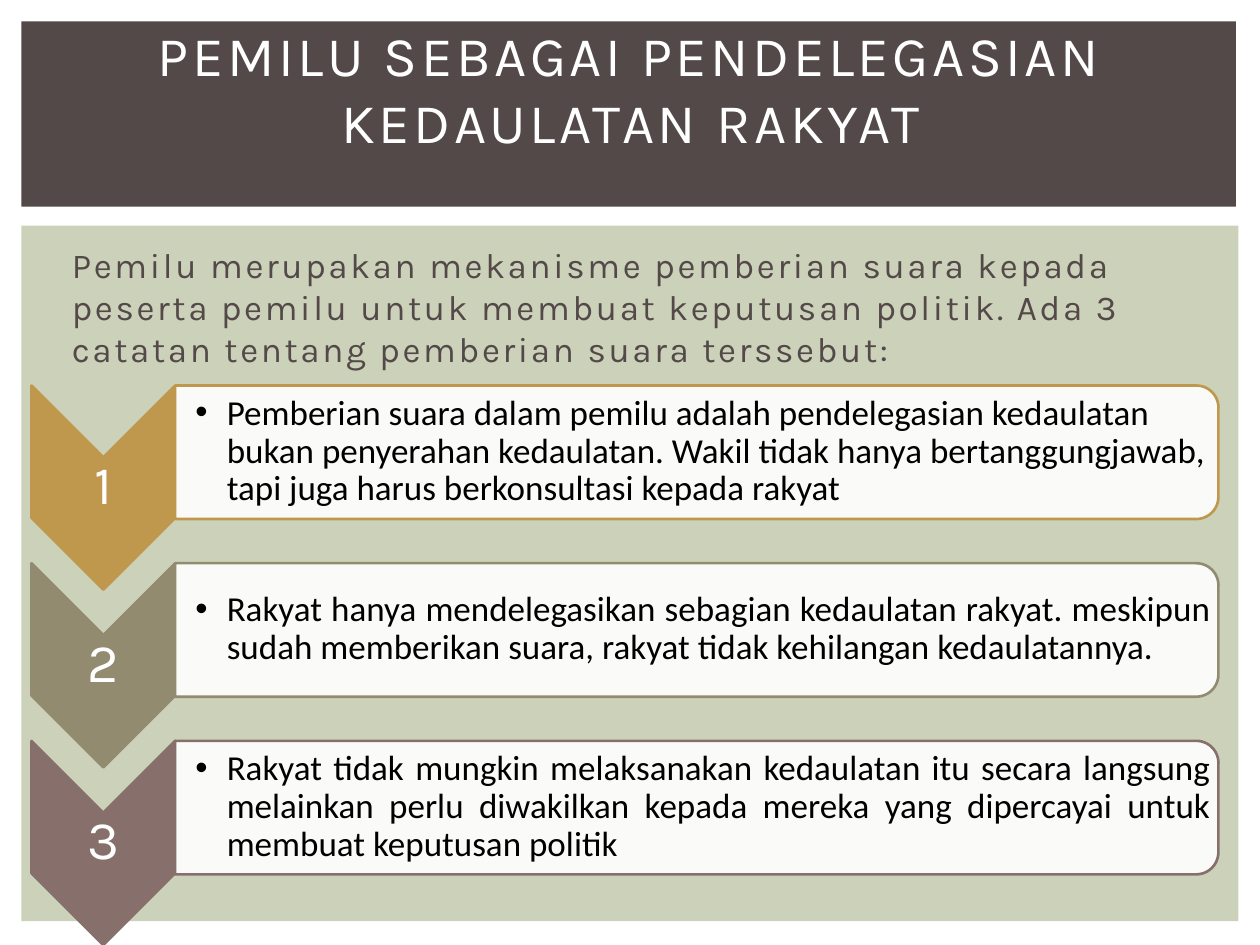
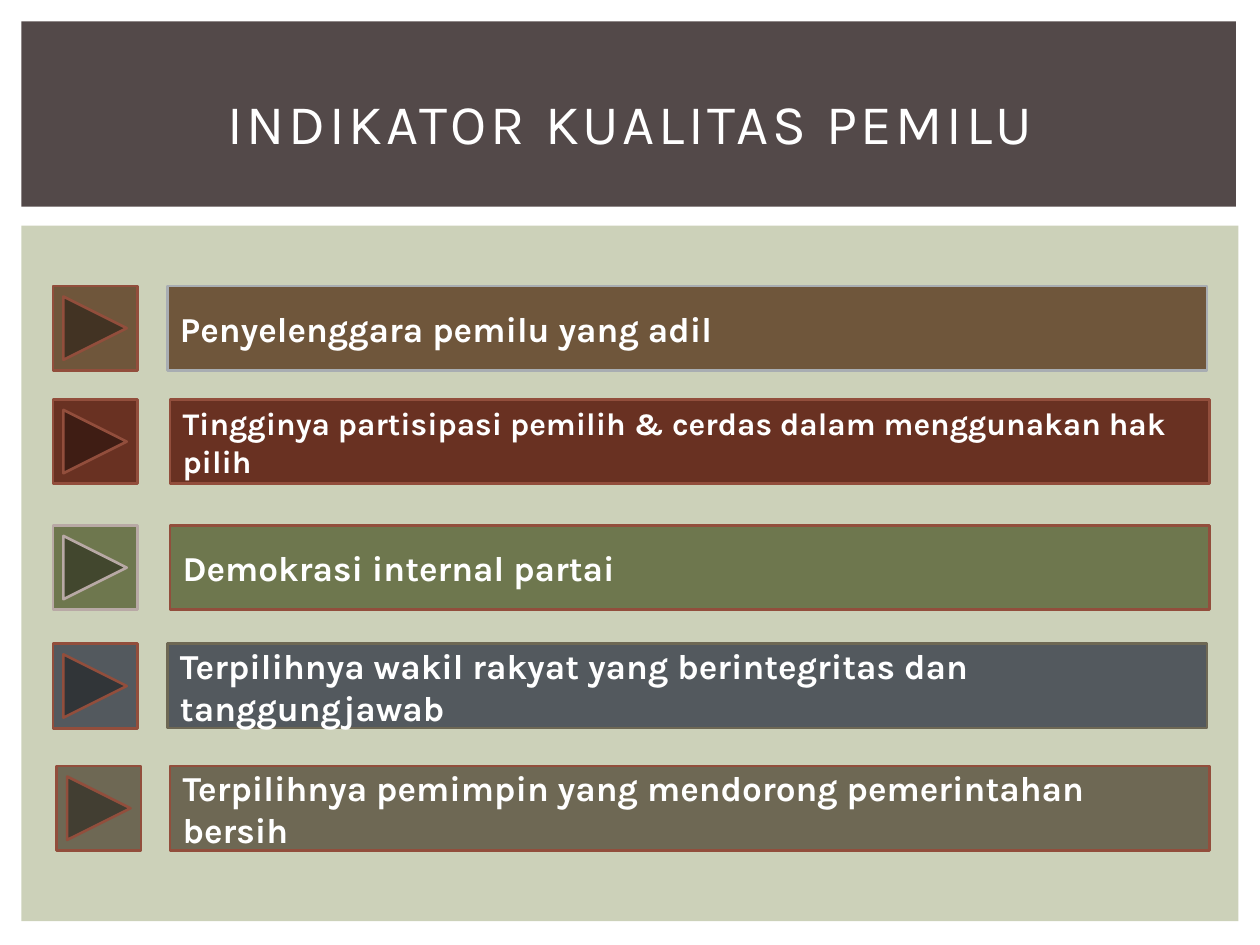
from dataclasses import dataclass

from lxml.etree import SubElement
from pptx import Presentation
from pptx.dml.color import RGBColor
from pptx.enum.shapes import MSO_SHAPE
from pptx.enum.text import MSO_ANCHOR, MSO_AUTO_SIZE, PP_ALIGN
from pptx.oxml.ns import qn
from pptx.util import Inches, Pt


@dataclass(frozen=True)
class Theme:
    """Colours, fonts and type sizes of the presentation."""

    dark: str = "534949"
    panel: str = "CCD1B9"
    white: str = "FFFFFF"
    black: str = "000000"
    gold: str = "BF974D"
    olive: str = "928B70"
    mauve: str = "87706B"
    brown: str = "6F563B"
    maroon: str = "693122"
    green: str = "6E774E"
    slate: str = "53595E"
    taupe: str = "6E6854"
    rust: str = "924E3C"
    silver: str = "A8ADB2"
    blush: str = "B8A9A5"
    heading_font: str = "Karla"
    note_font: str = "Calibri"
    title_size: int = 32
    number_size: int = 31
    text_size: int = 20
    small_size: int = 18
    line_width: float = 1.5


THEME = Theme()

NOTES = [
    ("Pemberian suara dalam pemilu adalah pendelegasian kedaulatan bukan penyerahan "
     "kedaulatan. Wakil tidak hanya bertanggungjawab, tapi juga harus berkonsultasi "
     "kepada rakyat", THEME.gold, PP_ALIGN.LEFT),
    ("Rakyat hanya mendelegasikan sebagian kedaulatan rakyat. meskipun sudah "
     "memberikan suara, rakyat tidak kehilangan kedaulatannya.",
     THEME.olive, PP_ALIGN.JUSTIFY),
    ("Rakyat tidak mungkin melaksanakan kedaulatan itu secara langsung melainkan perlu "
     "diwakilkan kepada mereka yang dipercayai untuk membuat keputusan politik",
     THEME.mauve, PP_ALIGN.JUSTIFY),
]

INDICATORS = [
    ("Penyelenggara pemilu yang adil", THEME.text_size,
     2.27, 0.42, 1.33, THEME.brown, THEME.rust, THEME.silver),
    ("Tingginya partisipasi pemilih & cerdas dalam menggunakan hak pilih", THEME.small_size,
     3.17, 0.42, 1.35, THEME.maroon, THEME.rust, THEME.rust),
    ("Demokrasi internal partai", THEME.text_size,
     4.17, 0.42, 1.35, THEME.green, THEME.blush, THEME.rust),
    ("Terpilihnya wakil rakyat yang berintegritas dan tanggungjawab", THEME.text_size,
     5.11, 0.42, 1.33, THEME.slate, THEME.rust, THEME.taupe),
    ("Terpilihnya pemimpin yang mendorong pemerintahan bersih", THEME.text_size,
     6.08, 0.45, 1.35, THEME.taupe, THEME.rust, THEME.rust),
]


def color(value):
    """Turn a hexadecimal string into a colour."""
    return RGBColor.from_string(value)


def place(shape, left, top, width, height):
    """Move and size a shape, in inches."""
    shape.left, shape.top = Inches(left), Inches(top)
    shape.width, shape.height = Inches(width), Inches(height)


def style(paragraph, size, fill, name=THEME.heading_font, bold=False, tracking=0):
    """Set the font of a whole paragraph, with letter spacing in points."""
    font = paragraph.font
    font.size, font.name, font.bold = Pt(size), name, bold
    font.color.rgb = color(fill)
    if tracking:
        properties = paragraph._p.get_or_add_pPr().find(qn("a:defRPr"))
        properties.set("spc", str(int(tracking * 100)))


def set_bullet(paragraph, margin, indent, character=None):
    """Set the indents of a paragraph and its bullet, if any."""
    properties = paragraph._p.get_or_add_pPr()
    properties.set("marL", str(Inches(margin)))
    properties.set("indent", str(Inches(indent)))
    if character:
        SubElement(properties, qn("a:buFont"), typeface="Arial")
        SubElement(properties, qn("a:buChar"), char=character)
    else:
        SubElement(properties, qn("a:buNone"))


def add_figure(slide, kind, left, top, width, height, fill, line=None):
    """Add a filled preset shape, outlined when a line colour is given."""
    shape = slide.shapes.add_shape(
        kind, Inches(left), Inches(top), Inches(width), Inches(height))
    shape.shadow.inherit = False
    shape.fill.solid()
    shape.fill.fore_color.rgb = color(fill)
    if line:
        shape.line.color.rgb = color(line)
        shape.line.width = Pt(THEME.line_width)
    else:
        shape.line.fill.background()
    return shape


def add_turned_figure(slide, kind, left, top, width, height, fill, line):
    """Add a shape turned clockwise by 90 degrees that fills the given area."""
    shift = (width - height) / 2
    shape = add_figure(
        slide, kind, left + shift, top - shift, height, width, fill, line)
    shape.rotation = 90
    return shape


def add_text(slide, text, left, top, width, height, insets):
    """Add a wrapped, vertically centred text box and return its paragraph."""
    box = slide.shapes.add_textbox(
        Inches(left), Inches(top), Inches(width), Inches(height))
    frame = box.text_frame
    frame.word_wrap = True
    frame.vertical_anchor = MSO_ANCHOR.MIDDLE
    frame.margin_left, frame.margin_top, frame.margin_right, frame.margin_bottom = map(
        Inches, insets)
    paragraph = frame.paragraphs[0]
    paragraph.text = text
    paragraph.line_spacing = 0.9
    return paragraph


def add_master_bands(presentation, slide):
    """Put the title band and the content panel behind every slide."""
    bands = [(0.17, 1.79, 9.66, 5.52, THEME.panel), (0.17, 0.17, 9.64, 1.47, THEME.dark)]
    tree = presentation.slide_master.shapes.element
    for number, (left, top, width, height, fill) in enumerate(bands):
        band = add_figure(slide, MSO_SHAPE.RECTANGLE, left, top, width, height, fill)
        band.element.nvSpPr.cNvPr.set("id", str(100 + number))
        tree.insert(2 + number, band.element)


def set_title(slide, text, top):
    """Fill and format the title placeholder."""
    title = slide.shapes.title
    place(title, 0.42, top, 9.17, 1.15)
    frame = title.text_frame
    frame.text = text
    frame.auto_size = MSO_AUTO_SIZE.NONE
    frame.vertical_anchor = MSO_ANCHOR.MIDDLE
    frame.paragraphs[0].alignment = PP_ALIGN.CENTER
    style(frame.paragraphs[0], THEME.title_size, THEME.white, tracking=2)


def set_introduction(slide, text):
    """Fill and format the body placeholder."""
    body = slide.placeholders[1]
    place(body, 0.42, 1.88, 9.19, 4.82)
    frame = body.text_frame
    frame.text = text
    frame.auto_size = MSO_AUTO_SIZE.NONE
    paragraph = frame.paragraphs[0]
    paragraph.space_before = Pt(0)
    set_bullet(paragraph, 0.05, 0)
    style(paragraph, THEME.text_size, THEME.dark, tracking=1.5)


def add_note(slide, number, text, accent, alignment):
    """Add a numbered chevron with its note beside it."""
    top = 3.06 + 1.41 * (number - 1)
    add_turned_figure(
        slide, MSO_SHAPE.CHEVRON, 0.25, top, 1.14, 1.62, accent, accent)
    label = add_text(slide, str(number), 0.25, top + 0.56, 1.14, 0.49, [0.02] * 4)
    label.alignment = PP_ALIGN.CENTER
    style(label, THEME.number_size, THEME.white)

    card = add_turned_figure(
        slide, MSO_SHAPE.ROUND_2_SAME_RECTANGLE, 1.39, top, 8.28, 1.06,
        THEME.white, accent)
    fill = card.element.spPr.find(qn("a:solidFill"))
    SubElement(fill[0], qn("a:alpha"), val="90000")
    note = add_text(
        slide, text, 1.39, top + 0.05, 8.23, 0.95, [0.16, 0.01, 0.01, 0.01])
    note.alignment = alignment
    set_bullet(note, 0.25, -0.25, "•")
    style(note, THEME.text_size, THEME.black, THEME.note_font)


def add_indicator(slide, text, size, top, button_left, bar_left, fill, button_line, bar_line):
    """Add a forward button and the labelled bar beside it."""
    add_figure(slide, MSO_SHAPE.ACTION_BUTTON_FORWARD_OR_NEXT,
               button_left, top, 0.67, 0.67, fill, button_line)
    bar = add_figure(
        slide, MSO_SHAPE.RECTANGLE, bar_left, top, 8.25, 0.67, fill, bar_line)
    frame = bar.text_frame
    frame.text = text
    frame.word_wrap = True
    frame.vertical_anchor = MSO_ANCHOR.MIDDLE
    frame.paragraphs[0].alignment = PP_ALIGN.LEFT
    style(frame.paragraphs[0], size, THEME.white, bold=True)


def main():
    """Build both slides and save the presentation."""
    presentation = Presentation()
    presentation.slide_width, presentation.slide_height = Inches(10), Inches(7.5)
    layouts = presentation.slide_layouts

    delegation = presentation.slides.add_slide(layouts.get_by_name("Title and Content"))
    add_master_bands(presentation, delegation)
    set_introduction(
        delegation,
        "Pemilu merupakan mekanisme pemberian suara kepada peserta pemilu untuk membuat "
        "keputusan politik. Ada 3 catatan tentang pemberian suara terssebut:")
    set_title(delegation, "PEMILU SEBAGAI PENDELEGASIAN KEDAULATAN RAKYAT", 0.12)
    for number, note in enumerate(NOTES, start=1):
        add_note(delegation, number, *note)

    quality = presentation.slides.add_slide(layouts.get_by_name("Title Only"))
    set_title(quality, "INDIKATOR KUALITAS PEMILU", 0.39)
    for indicator in INDICATORS:
        add_indicator(quality, *indicator)

    presentation.save("out.pptx")


if __name__ == "__main__":
    main()
